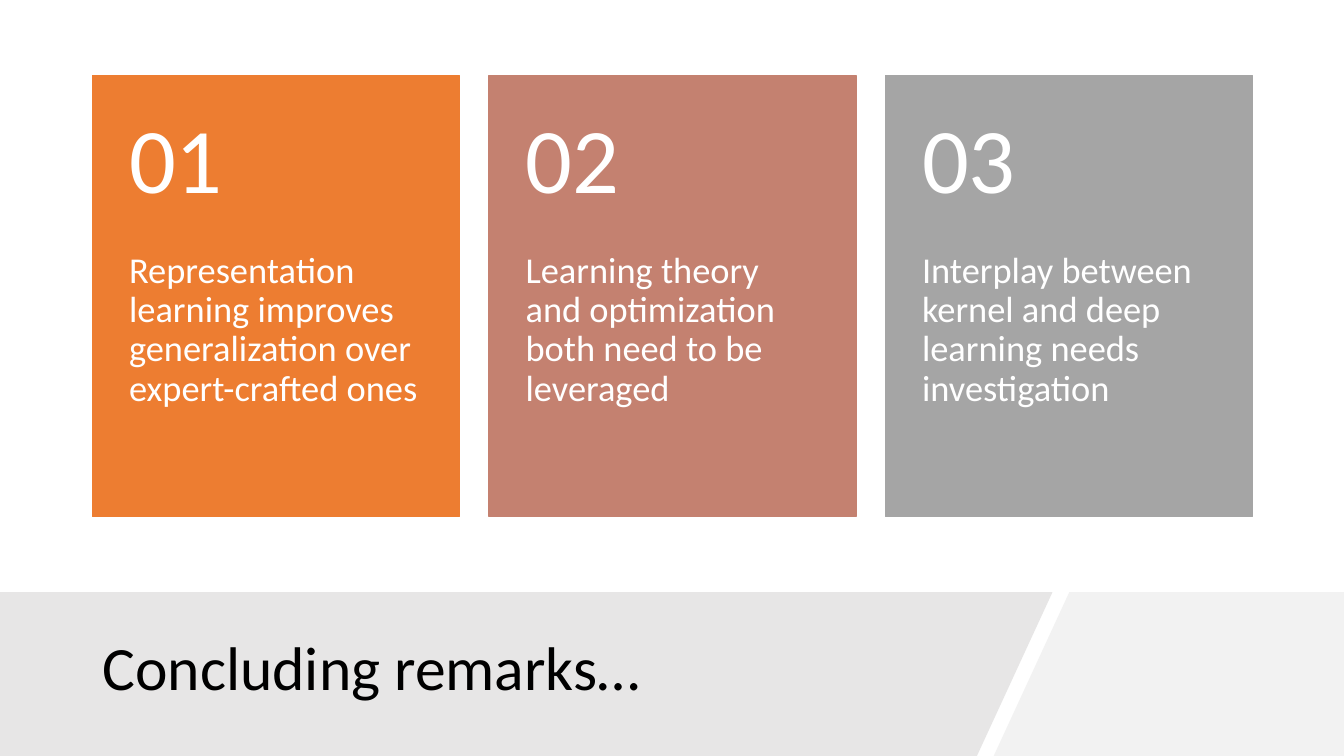
from pptx import Presentation
from pptx.dml.color import RGBColor
from pptx.enum.shapes import MSO_SHAPE
from pptx.enum.text import MSO_ANCHOR, MSO_AUTO_SIZE, PP_ALIGN
from pptx.util import Inches, Pt

WIDTH, HEIGHT = Inches(13.33), Inches(7.5)
COLUMNS, ROWS = 160, 60
FONT = "Calibri"
COLORS = {
    "orange": "ED7D31",
    "rose": "C48170",
    "gray": "A5A5A5",
    "band": "E7E6E6",
    "corner": "F2F2F2",
    "title": "000000",
    "card text": "FFFFFF",
}
CARDS = [
    ("orange", "Representation learning improves generalization over expert-crafted ones"),
    ("rose", "Learning theory and optimization both need to be leveraged"),
    ("gray", "Interplay between kernel and deep learning needs investigation"),
]
MARGIN = 11
CARD_WIDTH, CARD_PITCH = 43.7, 47.2
CARD_TOP, NUMBER_ROWS, REMARK_ROWS = 6, 14, 21
BAND_TOP = 47


def across(columns):
    return round(WIDTH * columns / COLUMNS)


def down(rows):
    return round(HEIGHT * rows / ROWS)


def place(left, top, width, height):
    return across(left), down(top), across(width), down(height)


def color(name):
    return RGBColor.from_string(COLORS[name])


def write(box, text, size, color_name, anchor):
    frame = box.text_frame
    frame.word_wrap = True
    frame.auto_size = MSO_AUTO_SIZE.NONE
    frame.vertical_anchor = anchor
    frame.text = text
    para = frame.paragraphs[0]
    para.alignment = PP_ALIGN.LEFT
    para.line_spacing = 0.9
    for span in para.runs:
        span.font.name = FONT
        span.font.size = Pt(size)
        span.font.color.rgb = color(color_name)


def add_panel(page, color_name, points):
    corners = [(across(column), down(row)) for column, row in points]
    builder = page.shapes.build_freeform(*corners[0])
    builder.add_line_segments(corners[1:], close=True)
    panel = builder.convert_to_shape()
    panel.shadow.inherit = False
    panel.fill.solid()
    panel.fill.fore_color.rgb = color(color_name)
    panel.line.fill.background()


def add_card_text(group, area, text, size, anchor, top_inset, bottom_inset):
    box = group.shapes.add_textbox(*place(*area))
    write(box, text, size, "card text", anchor)
    frame = box.text_frame
    frame.margin_left = frame.margin_right = across(CARD_WIDTH / 10)
    frame.margin_top, frame.margin_bottom = Inches(top_inset), Inches(bottom_inset)


def add_card(group, index, color_name, remark):
    left = MARGIN + index * CARD_PITCH
    card = group.shapes.add_shape(
        MSO_SHAPE.RECTANGLE,
        *place(left, CARD_TOP, CARD_WIDTH, NUMBER_ROWS + REMARK_ROWS),
    )
    card.shadow.inherit = False
    card.fill.solid()
    card.fill.fore_color.rgb = color(color_name)
    card.line.color.rgb = color(color_name)
    card.line.width = Pt(1)
    add_card_text(group, (left, CARD_TOP + NUMBER_ROWS, CARD_WIDTH, REMARK_ROWS),
                  remark, 26, MSO_ANCHOR.TOP, 0, 0.36)
    add_card_text(group, (left, CARD_TOP, CARD_WIDTH, NUMBER_ROWS),
                  f"{index + 1:02}", 66, MSO_ANCHOR.MIDDLE, 0.18, 0.18)


def add_title(page, text):
    title = page.shapes.title
    title.left, title.top, title.width, title.height = place(MARGIN, 48.4, 106, 9.6)
    write(title, text, 44, "title", MSO_ANCHOR.MIDDLE)
    page.shapes._spTree.append(title._element)


def main():
    deck = Presentation()
    deck.slide_width, deck.slide_height = WIDTH, HEIGHT
    page = deck.slides.add_slide(deck.slide_layouts[5])
    add_panel(page, "corner", [(127.3, BAND_TOP), (COLUMNS, BAND_TOP),
                               (COLUMNS, ROWS), (118.3, ROWS)])
    add_panel(page, "band", [(0, BAND_TOP), (125.3, BAND_TOP),
                             (116.3, ROWS), (0, ROWS)])
    add_title(page, "Concluding remarks…")
    group = page.shapes.add_group_shape()
    for index, (color_name, remark) in enumerate(CARDS):
        add_card(group, index, color_name, remark)
    deck.save("out.pptx")


if __name__ == "__main__":
    main()
